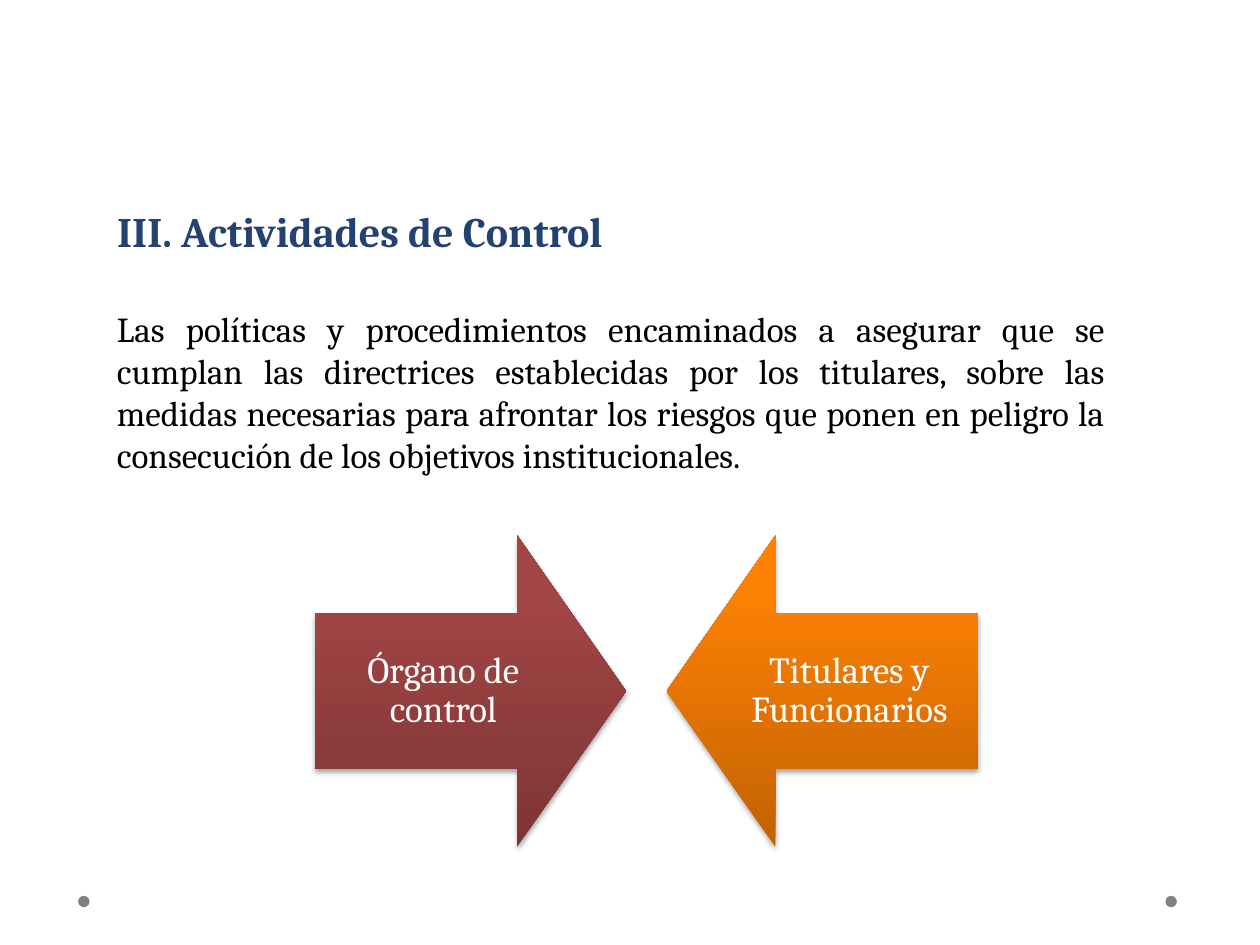
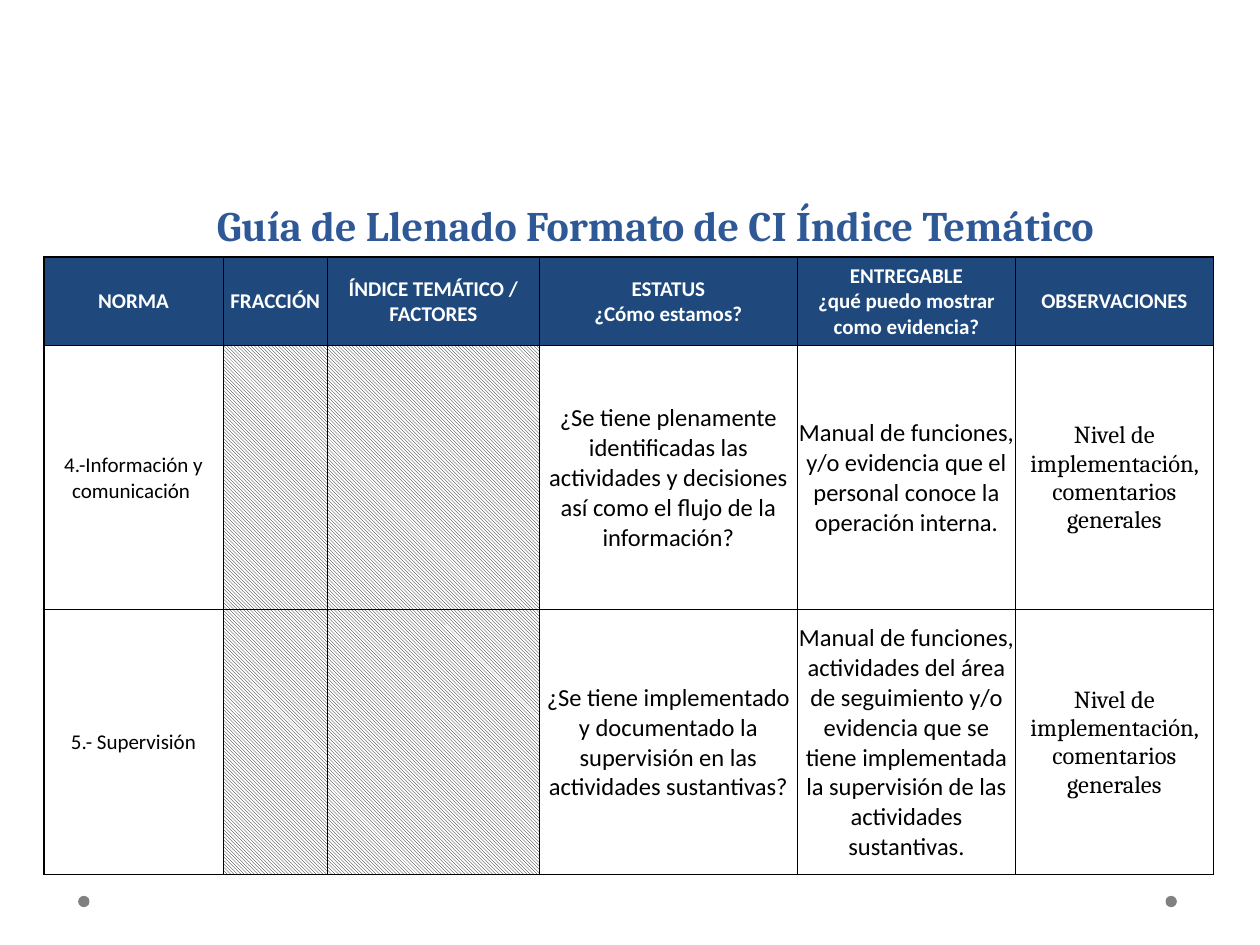
from copy import deepcopy

from lxml import etree
from pptx import Presentation
from pptx import util as u
from pptx.dml.color import RGBColor
from pptx.enum import dml, shapes, text
from pptx.oxml import ns

HUES = {
    "dot": "808080", "navy": "234271", "blue": "2F5897", "head": "1F497D",
    "ink": "000000", "paper": "FFFFFF",
}
REDS = ("7D3535", "A24545", "A44343")
GOLDS = ("C26203", "FB8004", "FF8002")
SERIF, SANS = "Cambria", "Calibri"
STEP = u.Inches(0.1)
MID = text.PP_ALIGN.CENTER
EVEN = text.PP_ALIGN.JUSTIFY

FOOT = (6.2, 71.1, 87.2, 0.9)
PAIR = (25, 42.5, 52.6, 24.7)
GRID = (3.5, 20.4, 92.9, 49)
COLS = (14.2, 8.3, 16.8, 20.5, 17.3, 15.7)
ROWS = (7, 21, 21)

LEVEL = "Nivel de implementación, comentarios generales"
CELLS = (
    ("NORMA", "FRACCIÓN", "ÍNDICE TEMÁTICO / FACTORES", "ESTATUS\v¿Cómo estamos?",
     "ENTREGABLE\v¿qué puedo mostrar como evidencia?", "OBSERVACIONES"),
    ("4.-Información y comunicación ", "", "",
     "¿Se tiene plenamente identificadas las actividades y decisiones así como el "
     "flujo de la información?",
     "Manual de funciones, y/o evidencia que el personal conoce la operación interna.",
     LEVEL),
    ("5.- Supervisión", "", "",
     "¿Se tiene implementado y documentado la supervisión en las actividades "
     "sustantivas?",
     "Manual de funciones, actividades del área de seguimiento y/o evidencia que se "
     "tiene implementada la supervisión de las actividades sustantivas.",
     LEVEL),
)
POLICY = (
    "Las políticas y procedimientos encaminados a asegurar que se cumplan las "
    "directrices establecidas por los titulares, sobre las medidas necesarias para "
    "afrontar los riesgos que ponen en peligro la consecución de los objetivos "
    "institucionales."
)


def span(*units):
    return [round(n * STEP) for n in units]


def shade(hue):
    return RGBColor.from_string(HUES.get(hue, hue))


def apply(item, **values):
    for name, value in values.items():
        setattr(item, name, value)


def write(frame, words, size, hue, align=MID, face=SERIF, bold=False):
    frame.text = words
    line = frame.paragraphs[0]
    line.alignment = align
    for run in line.runs:
        apply(run.font, name=face, size=u.Pt(size), bold=bold)
        run.font.color.rgb = shade(hue)
    return line


def place_title(slide, box, words, hue, align):
    title = slide.shapes.title
    left, top, width, height = span(*box)
    apply(title, left=left, top=top, width=width, height=height)
    apply(title.text_frame, word_wrap=True, auto_size=text.MSO_AUTO_SIZE.NONE,
          vertical_anchor=text.MSO_ANCHOR.TOP)
    write(title.text_frame, words, 24, hue, align, bold=True)


def draw_dots(slide, box):
    left, top, width, size = box
    for edge in (left, left + width - size):
        dot = slide.shapes.add_shape(shapes.MSO_SHAPE.OVAL, *span(edge, top, size, size))
        dot.shadow.inherit = False
        dot.fill.solid()
        dot.fill.fore_color.rgb = shade("dot")
        dot.line.fill.background()


def add_page(deck, box, words, hue, align):
    slide = deck.slides.add_slide(deck.slide_layouts[5])
    draw_dots(slide, FOOT)
    place_title(slide, box, words, hue, align)
    return slide


def add_body(slide, box, words):
    frame = slide.shapes.add_textbox(*span(*box)).text_frame
    frame.word_wrap = True
    write(frame, words, 20, "ink", EVEN)


def add_glow(shape):
    shape.shadow.inherit = False
    glow = shape.element.spPr.find(ns.qn("a:effectLst"))
    cast = etree.SubElement(glow, ns.qn("a:outerShdw"), blurRad="40000",
                            dist="23000", dir="5400000", rotWithShape="0")
    tone = etree.SubElement(cast, ns.qn("a:srgbClr"), val=HUES["ink"])
    etree.SubElement(tone, ns.qn("a:alpha"), val="35000")


def blend(shape, tones):
    shape.fill.gradient()
    shape.fill.gradient_angle = 90
    stops = shape.element.spPr.find(".//" + ns.qn("a:gsLst"))
    stops.append(deepcopy(stops[0]))
    for stop, place, tone in zip(shape.fill.gradient_stops, (0, 0.8, 1), tones):
        stop.position = place
        stop.color.rgb = shade(tone)


def draw_pair(slide, box):
    left, top, width, size = box
    arrows = (
        (left, shapes.MSO_SHAPE.RIGHT_ARROW, REDS, "Órgano de control"),
        (left + width - size, shapes.MSO_SHAPE.LEFT_ARROW, GOLDS,
         "Titulares y Funcionarios"),
    )
    for edge, kind, tones, words in arrows:
        arrow = slide.shapes.add_shape(kind, *span(edge, top, size, size))
        arrow.adjustments[0], arrow.adjustments[1] = 0.5, 0.35
        blend(arrow, tones)
        arrow.line.fill.background()
        add_glow(arrow)
        pad = u.Inches(0.16)
        apply(arrow.text_frame, word_wrap=True, vertical_anchor=text.MSO_ANCHOR.MIDDLE,
              margin_left=pad, margin_right=pad, margin_top=pad, margin_bottom=pad)
        write(arrow.text_frame, words, 21, "paper").line_spacing = 0.9


def rule_cell(cell, widths):
    props = cell._tc.get_or_add_tcPr()
    for spot, (side, width) in enumerate(zip("LRTB", widths)):
        line = etree.Element(ns.qn("a:ln" + side), w=str(u.Pt(width)))
        fill = etree.SubElement(line, ns.qn("a:solidFill"))
        etree.SubElement(fill, ns.qn("a:srgbClr"), val=HUES["ink"])
        props.insert(spot, line)


def fill_cell(cell, words, head):
    if head:
        cell.fill.solid()
        cell.fill.fore_color.rgb = shade("head")
    elif words:
        cell.fill.background()
    else:
        cell.fill.patterned()
        cell.fill.pattern = dml.MSO_PATTERN.LIGHT_DOWNWARD_DIAGONAL
        cell.fill.fore_color.rgb = shade("ink")
        cell.fill.back_color.rgb = shade("paper")


def add_grid(slide, box):
    table = slide.shapes.add_table(len(ROWS), len(COLS), *span(*box)).table
    apply(table, first_row=False, horz_banding=False)
    for col, width in zip(table.columns, span(*COLS)):
        col.width = width
    for row, height in zip(table.rows, span(*ROWS)):
        row.height = height
    pad = u.Inches(0.01)
    last_r, last_c = len(ROWS) - 1, len(COLS) - 1
    for r, words_row in enumerate(CELLS):
        for c, words in enumerate(words_row):
            cell, head = table.cell(r, c), r == 0
            apply(cell, vertical_anchor=text.MSO_ANCHOR.MIDDLE, margin_left=pad,
                  margin_right=pad, margin_top=pad, margin_bottom=0)
            size = 12 if head or c == 0 else 14
            face = SERIF if c == last_c and not head else SANS
            write(cell.text_frame, words, size, "paper" if head else "ink",
                  face=face, bold=head)
            fill_cell(cell, words, head)
            outer = (c == 0, c == last_c, r == 0, r == last_r)
            rule_cell(cell, [1 if edge else 0.5 for edge in outer])


def main():
    deck = Presentation()
    deck.slide_width, deck.slide_height = span(100, 75)

    slide = add_page(deck, (8.3, 15.8, 80.4, 5), "III. Actividades de Control",
                     "navy", EVEN)
    add_body(slide, (8.3, 23.9, 80.4, 15), POLICY)
    draw_pair(slide, PAIR)

    slide = add_page(deck, (12.7, 15.3, 78.6, 5),
                     "Guía de Llenado Formato de CI Índice Temático", "blue", MID)
    add_grid(slide, GRID)

    deck.save("out.pptx")


if __name__ == "__main__":
    main()
